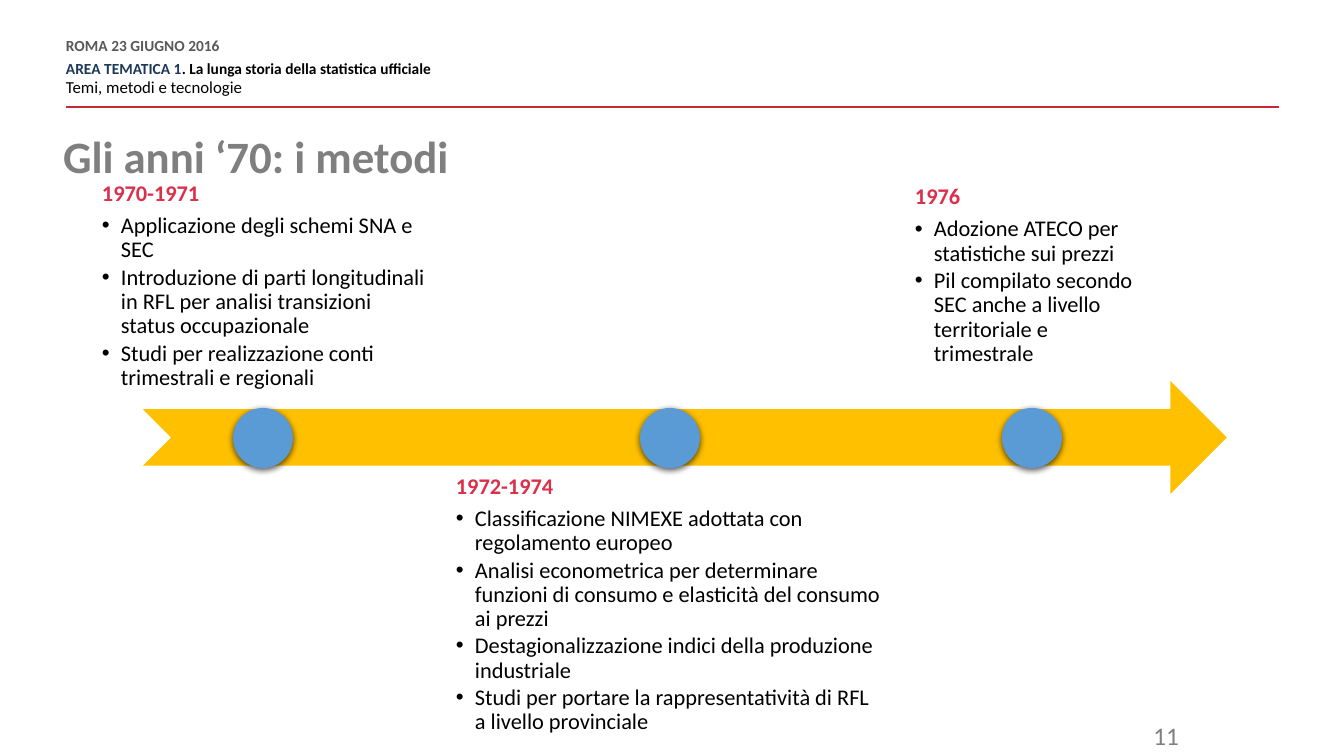
from dataclasses import dataclass

from lxml.etree import SubElement
from pptx import Presentation
from pptx.dml.color import RGBColor
from pptx.enum.shapes import MSO_CONNECTOR as Connector, MSO_SHAPE as Preset
from pptx.enum.text import MSO_ANCHOR as Anchor, MSO_AUTO_SIZE as AutoSize, PP_ALIGN as Align
from pptx.oxml.ns import qn
from pptx.util import Emu, Pt

SLIDE_WIDTH, SLIDE_HEIGHT = 1344, 756
TITLE_ONLY_LAYOUT = 5
AXIS_Y = 438
MARKER_SIZE = 60
BULLET_INDENT = 19


@dataclass(frozen=True)
class Theme:
    font: str = "Calibri"
    rule: str = "C72A31"
    event: str = "595959"
    area: str = "1C385A"
    body: str = "000000"
    muted: str = "7F7F7F"
    period: str = "DA304A"
    arrow: str = "FFC000"
    marker: str = "5B9BD5"
    header_size: float = 11
    subheader_size: float = 12
    title_size: float = 32
    body_size: float = 16
    number_size: float = 18


THEME = Theme()

# Period, marker centre, text box (left, top, width, height), anchor, bullets
MILESTONES = [
    ("1970-1971", 263, (90, 164, 347, 238), Anchor.BOTTOM, [
        "Applicazione degli schemi SNA e SEC",
        "Introduzione di parti longitudinali in RFL per analisi transizioni status occupazionale",
        "Studi per realizzazione conti trimestrali e regionali",
    ]),
    ("1972-1974", 670, (444, 463, 449, 238), Anchor.TOP, [
        "Classificazione NIMEXE adottata con regolamento europeo",
        "Analisi econometrica per determinare funzioni di consumo e elasticità del consumo ai prezzi",
        "Destagionalizzazione indici della produzione industriale",
        "Studi per portare la rappresentatività di RFL a livello provinciale",
    ]),
    ("1976", 1032, (903, 140, 258, 238), Anchor.BOTTOM, [
        "Adozione ATECO per statistiche sui prezzi",
        "Pil compilato secondo SEC anche a livello territoriale e trimestrale",
    ]),
]


def px(*lengths):
    return [Emu(round(length * 914400 / 100.8)) for length in lengths]


def add_run(paragraph, text, size, color, bold=False):
    run = paragraph.add_run()
    run.text = text
    run.font.name = THEME.font
    run.font.size = Pt(size)
    run.font.bold = bold
    run.font.color.rgb = RGBColor.from_string(color)


def format_frame(frame, inset=0, anchor=Anchor.TOP):
    frame.word_wrap = True
    frame.auto_size = AutoSize.NONE
    frame.vertical_anchor = anchor
    (margin,) = px(inset)
    frame.margin_left = frame.margin_right = margin
    frame.margin_top = frame.margin_bottom = margin
    return frame


def add_text_frame(slide, box, inset=0, anchor=Anchor.TOP):
    return format_frame(slide.shapes.add_textbox(*px(*box)).text_frame, inset, anchor)


def add_paragraph(frame, line_spacing, after=0, before=None):
    """Reuse the empty first paragraph of the frame, else append one."""
    first = frame.paragraphs[0]
    paragraph = frame.add_paragraph() if first.runs else first
    paragraph.line_spacing = line_spacing
    paragraph.space_after = Pt(after)
    if before is not None:
        paragraph.space_before = Pt(before)
    return paragraph


def add_bullet(paragraph):
    (indent,) = px(BULLET_INDENT)
    properties = paragraph._p.get_or_add_pPr()
    properties.set("marL", str(indent))
    properties.set("indent", str(-indent))
    SubElement(properties, qn("a:buFont"), typeface="Arial")
    SubElement(properties, qn("a:buChar"), char="•")


def add_filled_shape(slide, preset, box, color):
    shape = slide.shapes.add_shape(preset, *px(*box))
    shape.shadow.inherit = False
    shape.fill.solid()
    shape.fill.fore_color.rgb = RGBColor.from_string(color)
    shape.line.fill.background()
    return shape


def add_soft_shadow(shape):
    effects = shape._element.spPr.find(qn("a:effectLst"))
    shadow = SubElement(effects, qn("a:outerShdw"), blurRad=str(Pt(4.5)), dist=str(Pt(1.5)),
                        dir="5400000", algn="ctr", rotWithShape="0")
    color = SubElement(shadow, qn("a:srgbClr"), val="000000")
    SubElement(color, qn("a:alpha"), val="63000")


def add_header(slide):
    rule = slide.shapes.add_connector(Connector.STRAIGHT, *px(1279, 107, 66, 107))
    rule.line.color.rgb = RGBColor.from_string(THEME.rule)
    rule.line.width = Pt(2)
    SubElement(rule._element.spPr, qn("a:effectLst"))

    frame = add_text_frame(slide, (66, 39, 841, 59))
    size, spacing = THEME.header_size, Pt(10.8)
    add_run(add_paragraph(frame, spacing, after=6), "ROMA 23 GIUGNO 2016", size, THEME.event, True)
    area = add_paragraph(frame, spacing)
    add_run(area, "AREA TEMATICA 1", size, THEME.area, True)
    add_run(area, ". La lunga storia della statistica ufficiale", size, THEME.body, True)
    add_run(add_paragraph(frame, spacing, after=6, before=3),
            "Temi, metodi e tecnologie", THEME.subheader_size, THEME.body)


def add_title(slide, text):
    title = slide.shapes.title
    title.left, title.top, title.width, title.height = px(63, 126, 1221, 57)
    paragraph = add_paragraph(format_frame(title.text_frame, anchor=Anchor.BOTTOM), 0.9)
    paragraph.alignment = Align.LEFT
    add_run(paragraph, text, THEME.title_size, THEME.muted, True)


def add_slide_number(slide, number):
    frame = add_text_frame(slide, (887, 715, 302, 40), inset=10, anchor=Anchor.MIDDLE)
    paragraph = add_paragraph(frame, 1.0)
    paragraph.alignment = Align.RIGHT
    add_run(paragraph, number, THEME.number_size, THEME.muted)


def add_milestone(slide, period, center, box, anchor, bullets):
    frame = add_text_frame(slide, box, inset=12, anchor=anchor)
    size = THEME.body_size
    add_run(add_paragraph(frame, 0.9, after=size * 0.35), period, size, THEME.period, True)
    for text in bullets:
        paragraph = add_paragraph(frame, 0.9, after=size * 0.15)
        add_bullet(paragraph)
        add_run(paragraph, text, size, THEME.body)

    radius = MARKER_SIZE // 2
    marker_box = (center - radius, AXIS_Y - radius, MARKER_SIZE, MARKER_SIZE)
    add_soft_shadow(add_filled_shape(slide, Preset.OVAL, marker_box, THEME.marker))


def main():
    presentation = Presentation()
    presentation.slide_width, presentation.slide_height = px(SLIDE_WIDTH, SLIDE_HEIGHT)
    slide = presentation.slides.add_slide(presentation.slide_layouts[TITLE_ONLY_LAYOUT])
    add_header(slide)
    add_title(slide, "Gli anni ‘70: i metodi")
    add_slide_number(slide, "11")
    add_filled_shape(slide, Preset.NOTCHED_RIGHT_ARROW, (143, 381, 1084, 113), THEME.arrow)
    for milestone in MILESTONES:
        add_milestone(slide, *milestone)
    presentation.save("out.pptx")


if __name__ == "__main__":
    main()
